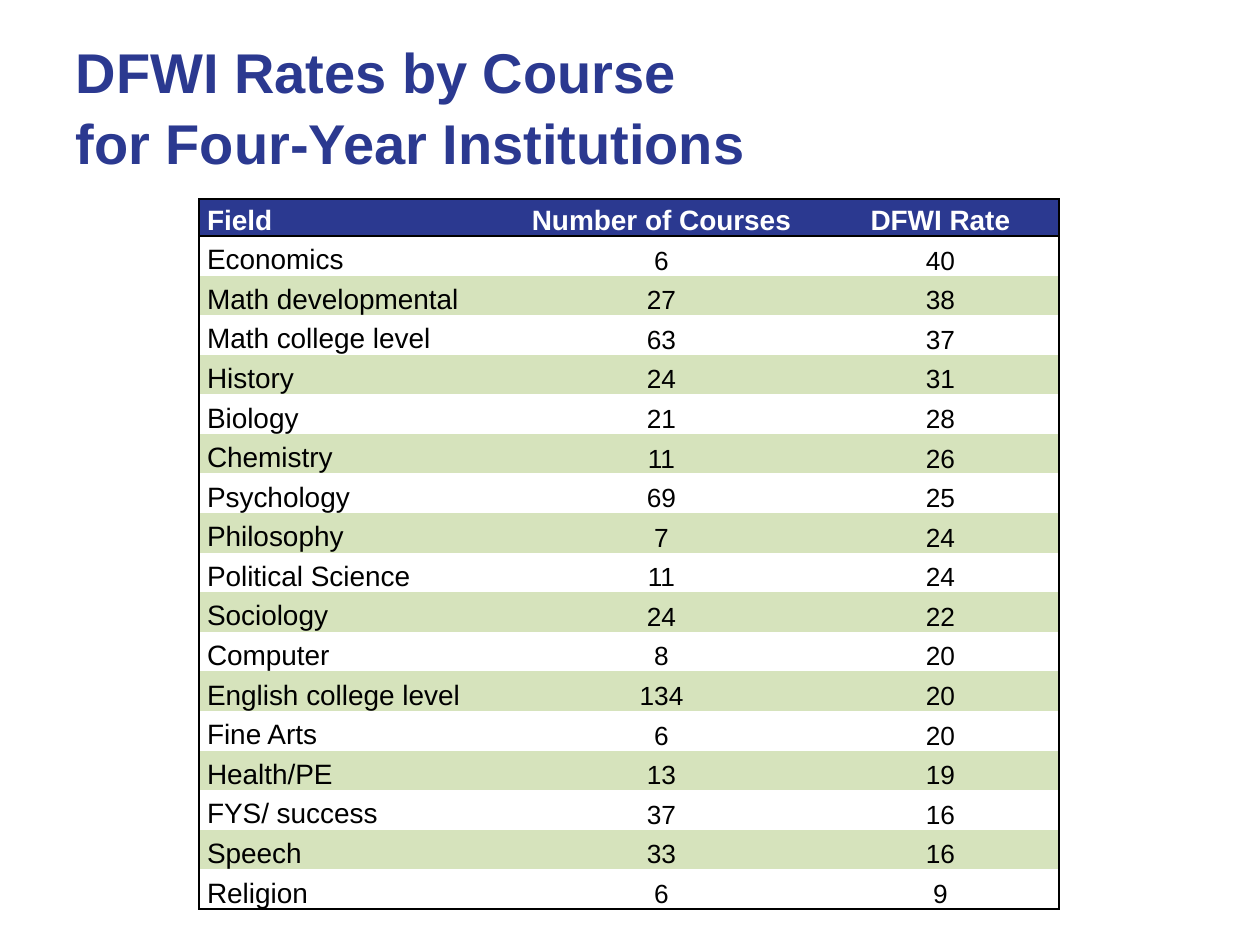
from typing import NamedTuple

from lxml import etree
from pptx import Presentation, util as u
from pptx.dml.color import RGBColor
from pptx.enum import text as t
from pptx.oxml import ns

EMU_PER_PX = 914400 / 126
FONT = "Arial"
COLORS = {"navy": "2B3990", "green": "D6E3BC", "white": "FFFFFF", "black": "000000"}
HEADINGS = ("Field", "Number of Courses", "DFWI Rate")
COLUMN_WIDTHS = (302, 321, 237)
HEADER_HEIGHT, BODY_HEIGHT = 37, 673


class Course(NamedTuple):
    field: str
    count: int
    rate: int


COURSES = [
    Course("Economics", 6, 40),
    Course("Math developmental", 27, 38),
    Course("Math college level", 63, 37),
    Course("History", 24, 31),
    Course("Biology", 21, 28),
    Course("Chemistry", 11, 26),
    Course("Psychology", 69, 25),
    Course("Philosophy", 7, 24),
    Course("Political Science", 11, 24),
    Course("Sociology", 24, 22),
    Course("Computer", 8, 20),
    Course("English college level", 134, 20),
    Course("Fine Arts", 6, 20),
    Course("Health/PE", 13, 19),
    Course("FYS/ success", 37, 16),
    Course("Speech", 33, 16),
    Course("Religion", 6, 9),
]


def px(length: int) -> int:
    return round(length * EMU_PER_PX)


def write(frame, wording: str, *, size: int, color: str, bold: bool = False,
          align=t.PP_ALIGN.LEFT, spacing: float = 1.15) -> None:
    frame.text = wording
    paragraph = frame.paragraphs[0]
    paragraph.alignment = align
    paragraph.line_spacing = spacing
    for run in paragraph.runs:
        run.font.name = FONT
        run.font.size = u.Pt(size)
        run.font.bold = bold
        run.font.color.rgb = RGBColor.from_string(COLORS[color])


def set_borders(cell, drawn: dict[str, bool]) -> None:
    """Rule the sides marked True in black and clear the others."""
    properties = cell._tc.get_or_add_tcPr()
    for position, side in enumerate(("L", "R", "T", "B")):
        line = etree.Element(ns.qn(f"a:ln{side}"), w=str(u.Pt(1)))
        if drawn[side]:
            fill = etree.SubElement(line, ns.qn("a:solidFill"))
            etree.SubElement(fill, ns.qn("a:srgbClr"), val=COLORS["black"])
        else:
            etree.SubElement(line, ns.qn("a:noFill"))
        properties.insert(position, line)


def fill_cell(cell, value, row: int, column: int) -> None:
    header, label = row == 0, column == 0
    cell.margin_left = cell.margin_right = px(8)
    cell.margin_top = cell.margin_bottom = 0
    cell.vertical_anchor = t.MSO_ANCHOR.BOTTOM
    write(cell.text_frame, str(value), size=16 if header or label else 15,
          color="white" if header else "black", bold=header,
          align=t.PP_ALIGN.LEFT if label else t.PP_ALIGN.CENTER)
    if header or row % 2 == 0:
        cell.fill.solid()
        cell.fill.fore_color.rgb = RGBColor.from_string(COLORS["navy" if header else "green"])
    else:
        cell.fill.background()
    set_borders(cell, {"L": label, "R": column == len(HEADINGS) - 1,
                       "T": row <= 1, "B": row in (0, len(COURSES))})


def add_course_table(slide) -> None:
    rows = [HEADINGS, *COURSES]
    table = slide.shapes.add_table(
        len(rows), len(HEADINGS), px(199), px(199),
        px(sum(COLUMN_WIDTHS)), px(HEADER_HEIGHT + BODY_HEIGHT)).table
    table.first_row = table.horz_banding = False
    for column, width in zip(table.columns, COLUMN_WIDTHS):
        column.width = px(width)
    for row, values in enumerate(rows):
        table.rows[row].height = px(HEADER_HEIGHT) if row == 0 else px(BODY_HEIGHT) // len(COURSES)
        for column, value in enumerate(values):
            fill_cell(table.cell(row, column), value, row, column)


def main() -> None:
    deck = Presentation()
    deck.slide_width, deck.slide_height = px(1260), px(945)
    slide = deck.slides.add_slide(deck.slide_layouts[5])
    add_course_table(slide)
    title = slide.shapes.title
    title.left, title.top, title.width, title.height = px(63), px(21), px(1197), px(168)
    title.text_frame.vertical_anchor = t.MSO_ANCHOR.MIDDLE
    write(title.text_frame, "DFWI Rates by Course\vfor Four-Year Institutions",
          size=32, color="navy", bold=True, spacing=1.05)
    deck.save("out.pptx")


if __name__ == "__main__":
    main()
